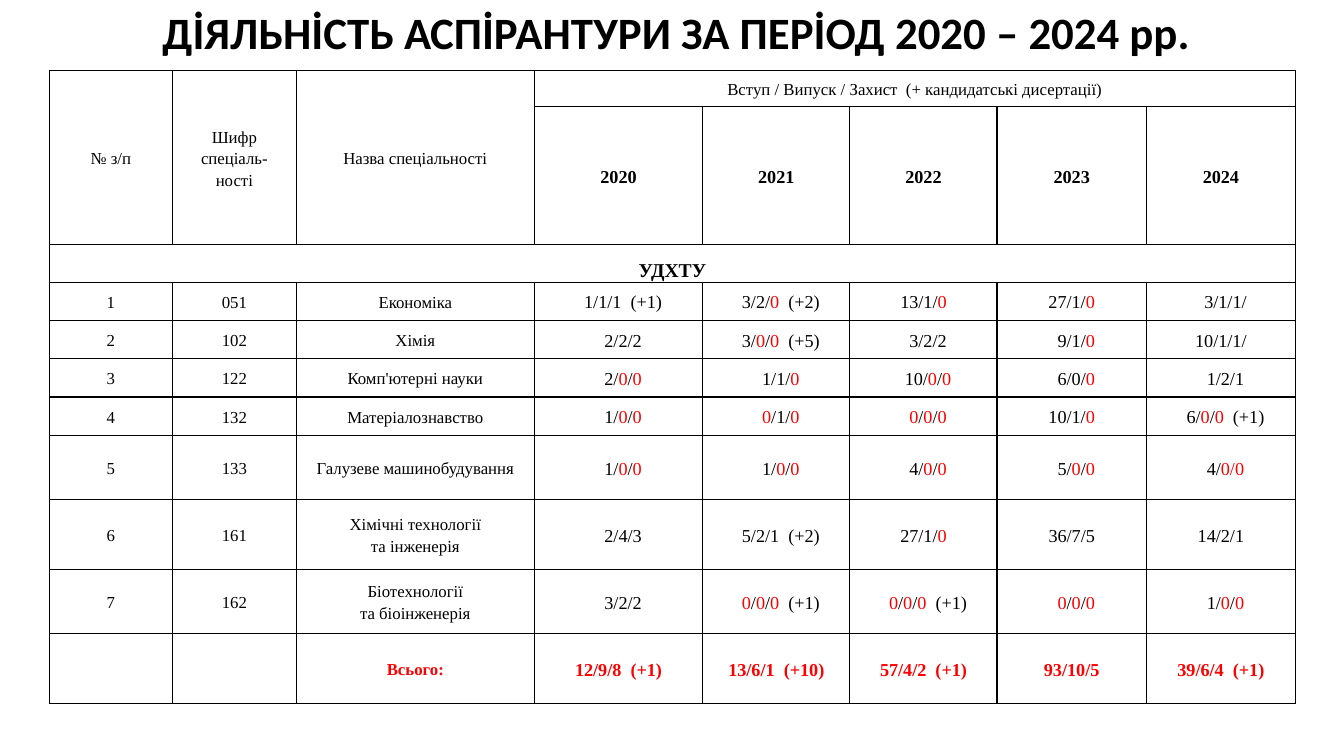
from dataclasses import dataclass

from lxml import etree
from pptx import Presentation
from pptx.dml.color import RGBColor
from pptx.enum import text as t
from pptx.oxml import ns
from pptx.util import Inches, Pt


@dataclass(frozen=True)
class Theme:
    """Colours, fonts and type sizes of the slide."""
    ink: str = "000000"
    red: str = "FF0000"
    heading_font: str = "Calibri"
    table_font: str = "Times New Roman"
    heading: int = 32
    group: int = 14
    figure: int = 13
    label: int = 12
    border: int = 1


THEME = Theme()
COLUMNS = [1.22, 1.23, 2.36, 1.67, 1.46, 1.46, 1.48, 1.48, 0.04]
ROWS = [0.36, 1.37, 0.37] + [0.38] * 4 + [0.64, 0.69, 0.64, 0.69]
LABEL_COLUMNS = 3
LAST = len(COLUMNS) - 1
INSET = 0.06
SHIFT = 0.09

HEADERS = ["№ з/п", "Шифр спеціаль-\nності", "Назва спеціальності",
           "Вступ / Випуск / Захист  (+ кандидатські дисертації)"]
YEARS = ["2020", "2021", "2022", "2023", "2024"]
GROUP = "УДХТУ"
# Square brackets mark red text; a leading space marks a value set slightly to the right.
SPECIALTIES = [
    ["1", "051", "Економіка",
     " 1/1/1  (+1)", " 3/2/[0]  (+2)", "13/1/[0]", "27/1/[0]", " 3/1/1/"],
    ["2", "102", "Хімія",
     " 2/2/2", " 3/[0]/[0]  (+5)", " 3/2/2", " 9/1/[0]", "10/1/1/"],
    ["3", "122", "Комп'ютерні науки",
     " 2/[0]/[0]", " 1/1/[0]", " 10/[0]/[0]", " 6/0/[0]", " 1/2/1"],
    ["4", "132", "Матеріалознавство",
     " 1/[0]/[0]", " [0]/1/[0]", " [0]/[0]/[0]", "10/1/[0]", " 6/[0]/[0]  (+1)"],
    ["5", "133", "Галузеве машинобудування",
     " 1/[0]/[0]", " 1/[0]/[0]", " 4/[0]/[0]", " 5/[0]/[0]", " 4/[0/0]"],
    ["6", "161", "Хімічні технології\nта інженерія",
     " 2/4/3", " 5/2/1  (+2)", "27/1/[0]", "36/7/5", "14/2/1"],
    ["7", "162", "Біотехнології\nта біоінженерія",
     " 3/2/2", " [0]/[0]/[0]  (+1)", " [0]/[0]/[0]  (+1)", " [0]/[0]/[0]", " 1/[0]/[0]"],
]
TOTALS = ["Всього:", "12/9/8  (+1)", "13/6/1  (+10)", "57/4/2  (+1)", "93/10/5", "39/6/4  (+1)"]


def write(frame, content, *, font=THEME.table_font, size=THEME.label, bold=False,
          color=THEME.ink, line=1.15, gap=0):
    """Fill a text frame with centred lines, turning bracketed parts red."""
    for index, words in enumerate(content.split("\n")):
        para = frame.add_paragraph() if index else frame.paragraphs[0]
        para.alignment = t.PP_ALIGN.CENTER
        para.line_spacing = line
        para.space_before = para.space_after = Pt(gap)
        for place, part in enumerate(words.replace("]", "[").split("[")):
            if part:
                span = para.add_run()
                span.text = part
                span.font.name = font
                span.font.size = Pt(size)
                span.font.bold = bold
                tint = THEME.red if place % 2 else color
                span.font.color.rgb = RGBColor.from_string(tint)


def draw_borders(cell, sides):
    """Draw the named sides of a cell and clear the others."""
    properties = cell._tc.get_or_add_tcPr()
    for index, side in enumerate("LRTB"):
        edge = etree.Element(ns.qn(f"a:ln{side}"), w=str(Pt(THEME.border)))
        if side in sides:
            fill = etree.SubElement(edge, ns.qn("a:solidFill"))
            etree.SubElement(fill, ns.qn("a:srgbClr"), val=THEME.ink)
        else:
            etree.SubElement(edge, ns.qn("a:noFill"))
        properties.insert(index, edge)


def set_cell(cell, content, *, anchor=t.MSO_ANCHOR.MIDDLE, **style):
    """Write one table cell, shifting marked values to the right."""
    if content.startswith(" "):
        cell.margin_left = Inches(INSET + SHIFT)
    cell.vertical_anchor = anchor
    write(cell.text_frame, content.strip(), **style)


def add_heading(page, content):
    """Place and format the slide title."""
    box = page.shapes.title
    box.left, box.top, box.width, box.height = map(Inches, (0.95, 0, 11.52, 0.64))
    frame = box.text_frame
    frame.word_wrap = True
    frame.auto_size = t.MSO_AUTO_SIZE.SHAPE_TO_FIT_TEXT
    frame.vertical_anchor = t.MSO_ANCHOR.TOP
    write(frame, content, font=THEME.heading_font, size=THEME.heading, bold=True, line=1.0)


def add_grid(page):
    """Add the plain bordered table with its merged header cells."""
    box = page.shapes.add_table(len(ROWS), len(COLUMNS), Inches(0.49), Inches(0.7),
                                Inches(sum(COLUMNS)), Inches(sum(ROWS)))
    table = box.table
    table.first_row = table.horz_banding = False
    for column, width in zip(table.columns, COLUMNS):
        column.width = Inches(width)
    for row, height in zip(table.rows, ROWS):
        row.height = Inches(height)
        for index, cell in enumerate(row.cells):
            cell.fill.background()
            cell.margin_left = cell.margin_right = Inches(INSET)
            cell.margin_top = cell.margin_bottom = 0
            draw_borders(cell, "L" if index == LAST else "LRTB")
    for column in range(LABEL_COLUMNS):
        table.cell(0, column).merge(table.cell(1, column))
    table.cell(0, LABEL_COLUMNS).merge(table.cell(0, LAST - 1))
    table.cell(2, 0).merge(table.cell(2, LAST - 1))
    return table


def fill_row(table, row, values, *, start=0, **style):
    """Write consecutive cells, with larger type in the year columns."""
    for column, content in enumerate(values, start):
        size = THEME.label if column < LABEL_COLUMNS or row == 0 else THEME.figure
        set_cell(table.cell(row, column), content, size=size, **style)


def main():
    """Build and save the slide."""
    deck = Presentation()
    deck.slide_width, deck.slide_height = Inches(13.33), Inches(7.5)
    page = deck.slides.add_slide(deck.slide_layouts[5])
    add_heading(page, "ДİЯЛЬНİСТЬ АСПİРАНТУРИ ЗА ПЕРİОД 2020 – 2024 рр.")
    table = add_grid(page)
    fill_row(table, 0, HEADERS)
    fill_row(table, 1, YEARS, start=LABEL_COLUMNS, bold=True)
    set_cell(table.cell(2, 0), GROUP, anchor=t.MSO_ANCHOR.BOTTOM,
             size=THEME.group, bold=True, gap=6)
    for row, values in enumerate(SPECIALTIES, 3):
        fill_row(table, row, values)
    fill_row(table, len(ROWS) - 1, TOTALS, start=LABEL_COLUMNS - 1, bold=True, color=THEME.red)
    deck.save("out.pptx")


if __name__ == "__main__":
    main()
